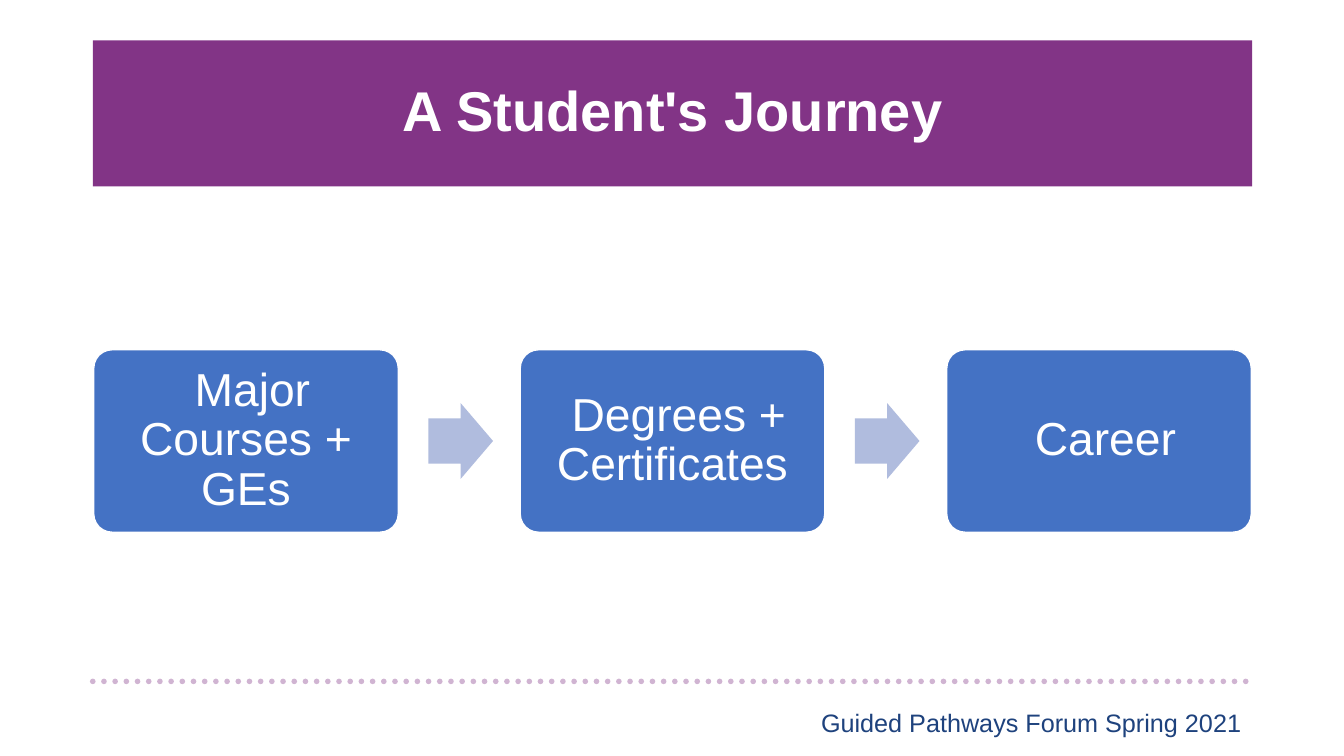
from lxml import etree
from pptx import Presentation
from pptx.dml.color import RGBColor
from pptx.enum.dml import MSO_LINE
from pptx.enum.shapes import MSO_CONNECTOR, MSO_SHAPE
from pptx.enum.text import MSO_ANCHOR, PP_ALIGN
from pptx.oxml.ns import qn
from pptx.util import Inches, Pt

STRAIGHT = MSO_CONNECTOR.STRAIGHT
ROUNDED, ARROW = MSO_SHAPE.ROUNDED_RECTANGLE, MSO_SHAPE.RIGHT_ARROW
DOTS = MSO_LINE.ROUND_DOT
MIDDLE, TOP = MSO_ANCHOR.MIDDLE, MSO_ANCHOR.TOP
CENTER, RIGHT = PP_ALIGN.CENTER, PP_ALIGN.RIGHT

FONT = "Arial"
COLORS = {
    "purple": "823486",
    "navy": "1E427D",
    "blue": "4472C4",
    "pale": "B0BCDE",
    "white": "FFFFFF",
}
STEPS = [" Major Courses + GEs", " Degrees + Certificates", " Career"]
LEFT, PITCH = 0.93, 4.23


def color(name):
    return RGBColor.from_string(COLORS[name])


class Deck:
    def __init__(self):
        self.prs = Presentation()
        self.prs.slide_width = Inches(13.33)
        self.prs.slide_height = Inches(7.5)
        self.slide = self.prs.slides.add_slide(self.prs.slide_layouts[5])

    def label(self, shape, text, size, ink, align=CENTER, anchor=MIDDLE,
              bold=False, space=0.9):
        frame = shape.text_frame
        frame.text = text
        frame.word_wrap = True
        frame.vertical_anchor = anchor
        para = frame.paragraphs[0]
        para.alignment = align
        para.line_spacing = space
        font = para.runs[0].font
        font.name, font.size, font.bold = FONT, Pt(size), bold
        font.color.rgb = color(ink)

    def title(self, text, x, y, w, h):
        shape = self.slide.shapes.title
        shape.left, shape.top = Inches(x), Inches(y)
        shape.width, shape.height = Inches(w), Inches(h)
        shape.fill.solid()
        shape.fill.fore_color.rgb = color("purple")
        self.label(shape, text, 40, "white", bold=True)

    def shape(self, kind, x, y, w, h, fill, adjust):
        shape = self.slide.shapes.add_shape(
            kind, Inches(x), Inches(y), Inches(w), Inches(h))
        shape.shadow.inherit = False
        shape.fill.solid()
        shape.fill.fore_color.rgb = color(fill)
        shape.line.fill.background()
        shape.adjustments[0] = adjust
        return shape

    def step(self, text, x):
        box = self.shape(ROUNDED, x, 3.47, 3.02, 1.81, "blue", 0.1)
        box.line.color.rgb = color("white")
        box.line.width = Pt(1)
        frame = box.text_frame
        frame.margin_left = frame.margin_right = Inches(0.14)
        frame.margin_top = frame.margin_bottom = Inches(0.14)
        self.label(box, text, 33, "white")

    def arrow(self, x):
        self.shape(ARROW, x, 4, 0.64, 0.75, "pale", 0.6)

    def rule(self, x, y, end):
        """Draw a level, see-through line of round dots."""
        rule = self.slide.shapes.add_connector(
            STRAIGHT, Inches(x), Inches(y), Inches(end), Inches(y))
        rule.line.color.rgb = color("purple")
        rule.line.width = Pt(4)
        rule.line.dash_style = DOTS
        props = rule.element.spPr
        props.find(qn("a:ln")).set("cap", "rnd")
        tint = props.find(".//" + qn("a:srgbClr"))
        etree.SubElement(tint, qn("a:alpha")).set("val", "37000")
        etree.SubElement(props, qn("a:effectLst"))

    def footer(self, text, x, y, w, h):
        box = self.slide.shapes.add_textbox(
            Inches(x), Inches(y), Inches(w), Inches(h))
        self.label(box, text, 18, "navy", RIGHT, TOP, space=1.0)


def main():
    deck = Deck()
    deck.rule(0.92, 6.76, 12.42)
    deck.footer("Guided Pathways Forum Spring 2021", 6, 6.97, 6.41, 0.4)
    deck.title("A Student's Journey", 0.92, 0.4, 11.5, 1.45)
    for i, step in enumerate(STEPS):
        x = LEFT + i * PITCH
        if i:
            deck.arrow(x - 0.91)
        deck.step(step, x)
    deck.prs.save("out.pptx")


if __name__ == "__main__":
    main()
